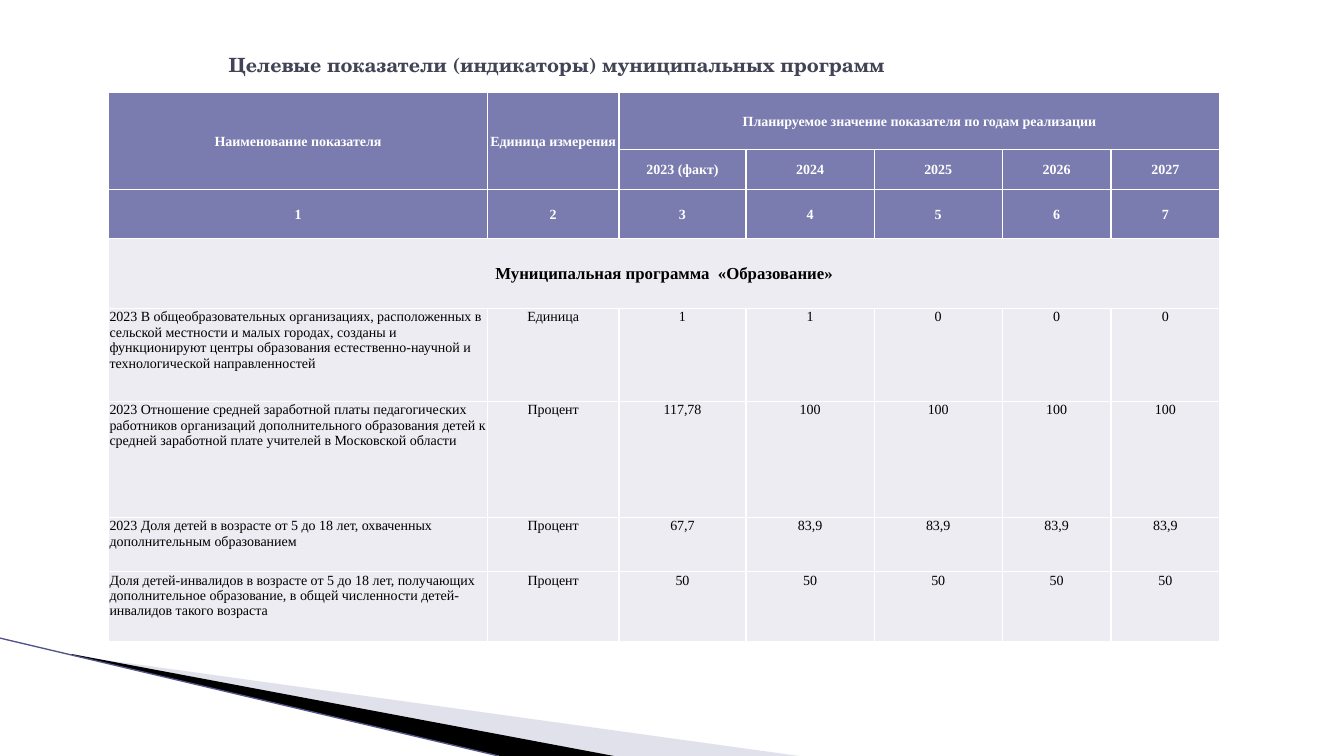
"""Build the slide with target indicators of municipal programmes."""
from lxml import etree
from pptx import Presentation
from pptx.dml.color import RGBColor
from pptx.enum.shapes import MSO_CONNECTOR
from pptx.enum.text import MSO_ANCHOR, PP_ALIGN
from pptx.oxml import parse_xml
from pptx.oxml.ns import qn
from pptx.util import Cm, Pt

LEFT, CENTER = PP_ALIGN.LEFT, PP_ALIGN.CENTER
TOP, MIDDLE = MSO_ANCHOR.TOP, MSO_ANCHOR.MIDDLE
STRAIGHT = MSO_CONNECTOR.STRAIGHT
HEADER_FILL, BODY_FILL = "7A7BAE", "ECECF2"
HEADER_ROWS, PROGRAM_ROW = 3, 3
BORDER = (
    '<a:{side} xmlns:a="http://schemas.openxmlformats.org/drawingml/2006/main" w="12700">'
    '<a:solidFill><a:srgbClr val="FFFFFF"/></a:solidFill></a:{side}>'
)


def rgb(value):
    return RGBColor.from_string(value)


def write(frame, text, size=10, color="000000", bold=False, align=CENTER, font="Times New Roman"):
    paragraph = frame.paragraphs[0]
    paragraph.alignment = align
    run = paragraph.add_run()
    run.text = text
    run.font.name = font
    run.font.size = Pt(size)
    run.font.bold = bold
    run.font.color.rgb = rgb(color)


prs = Presentation()
prs.slide_width, prs.slide_height = Cm(33.87), Cm(19.05)
slide = prs.slides.add_slide(prs.slide_layouts[5])

wedges = [
    ("B6B6D1", 40, [(1.85, 16.52), (20.14, 19.05), (15.44, 19.05)]),
    ("000000", 100, [(1.8, 16.48), (15.47, 19.05), (12.6, 19.05), (1.83, 16.51)]),
]
for color, opacity, corners in wedges:
    points = [(Cm(x), Cm(y)) for x, y in corners]
    outline = slide.shapes.build_freeform(*points[0])
    outline.add_line_segments(points[1:], close=True)
    wedge = outline.convert_to_shape()
    wedge.shadow.inherit = False
    wedge.fill.solid()
    wedge.fill.fore_color.rgb = rgb(color)
    wedge.line.fill.background()
    if opacity < 100:
        tint = wedge.fill._xPr.find(qn("a:solidFill"))[0]
        etree.SubElement(tint, qn("a:alpha")).set("val", str(opacity * 1000))

edge = slide.shapes.add_connector(STRAIGHT, Cm(0), Cm(16.08), Cm(12.57), Cm(19.05))
edge.line.color.rgb = rgb("53548A")
edge.line.width = Pt(0.95)
etree.SubElement(edge._element.spPr, qn("a:effectLst"))

title = slide.shapes.title
title.left, title.top, title.width, title.height = Cm(5.51), Cm(0.76), Cm(22.86), Cm(1.75)
title.text_frame.vertical_anchor = MIDDLE
write(title.text_frame, "Целевые показатели (индикаторы) муниципальных программ",
      size=14, color="424456", bold=True, align=LEFT, font="TeX Gyre Schola")

column_widths = [9.54, 3.32, 3.2, 3.23, 3.23, 2.74, 2.74]
row_heights = [1.42, 1.02, 1.22, 1.78, 2.34, 2.92, 1.37, 1.75]
indicators = [
    ["Наименование показателя", "Единица измерения",
     "Планируемое значение показателя по годам реализации", "", "", "", ""],
    ["", "", "2023 (факт)", "2024", "2025", "2026", "2027"],
    ["1", "2", "3", "4", "5", "6", "7"],
    ["Муниципальная программа  «Образование»", "", "", "", "", "", ""],
    ["2023 В общеобразовательных организациях, расположенных в сельской местности "
     "и малых городах, созданы и функционируют центры образования "
     "естественно-научной и технологической направленностей",
     "Единица", "1", "1", "0", "0", "0"],
    ["2023 Отношение средней заработной платы педагогических работников организаций "
     "дополнительного образования детей к средней заработной плате учителей "
     "в Московской области",
     "Процент", "117,78", "100", "100", "100", "100"],
    ["2023 Доля детей в возрасте от 5 до 18 лет, охваченных дополнительным образованием",
     "Процент", "67,7", "83,9", "83,9", "83,9", "83,9"],
    ["Доля детей-инвалидов в возрасте от 5 до 18 лет, получающих дополнительное "
     "образование, в общей численности детей-инвалидов такого возраста",
     "Процент", "50", "50", "50", "50", "50"],
]
table = slide.shapes.add_table(
    len(row_heights), len(column_widths), Cm(2.74), Cm(2.34),
    Cm(sum(column_widths)), Cm(sum(row_heights))).table
for column, width in zip(table.columns, column_widths):
    column.width = Cm(width)
for row, height in zip(table.rows, row_heights):
    row.height = Cm(height)

for first, last in [((0, 0), (1, 0)), ((0, 1), (1, 1)), ((0, 2), (0, 6)), ((3, 0), (3, 6))]:
    table.cell(*first).merge(table.cell(*last))

for r, values in enumerate(indicators):
    is_header, is_program = r < HEADER_ROWS, r == PROGRAM_ROW
    for c, value in enumerate(values):
        cell = table.cell(r, c)
        cell.margin_left = cell.margin_right = cell.margin_top = Cm(0.02)
        cell.margin_bottom = Cm(0)
        cell.vertical_anchor = MIDDLE if is_header or is_program else TOP
        cell.fill.solid()
        cell.fill.fore_color.rgb = rgb(HEADER_FILL if is_header else BODY_FILL)
        for position, side in enumerate(["lnL", "lnR", "lnT", "lnB"]):
            cell._tc.tcPr.insert(position, parse_xml(BORDER.format(side=side)))
        if value:
            write(cell.text_frame, value,
                  size=12 if is_program else 10,
                  color="FFFFFF" if is_header else "000000",
                  bold=is_header or is_program,
                  align=LEFT if r > PROGRAM_ROW and c == 0 else CENTER)

prs.save("out.pptx")
